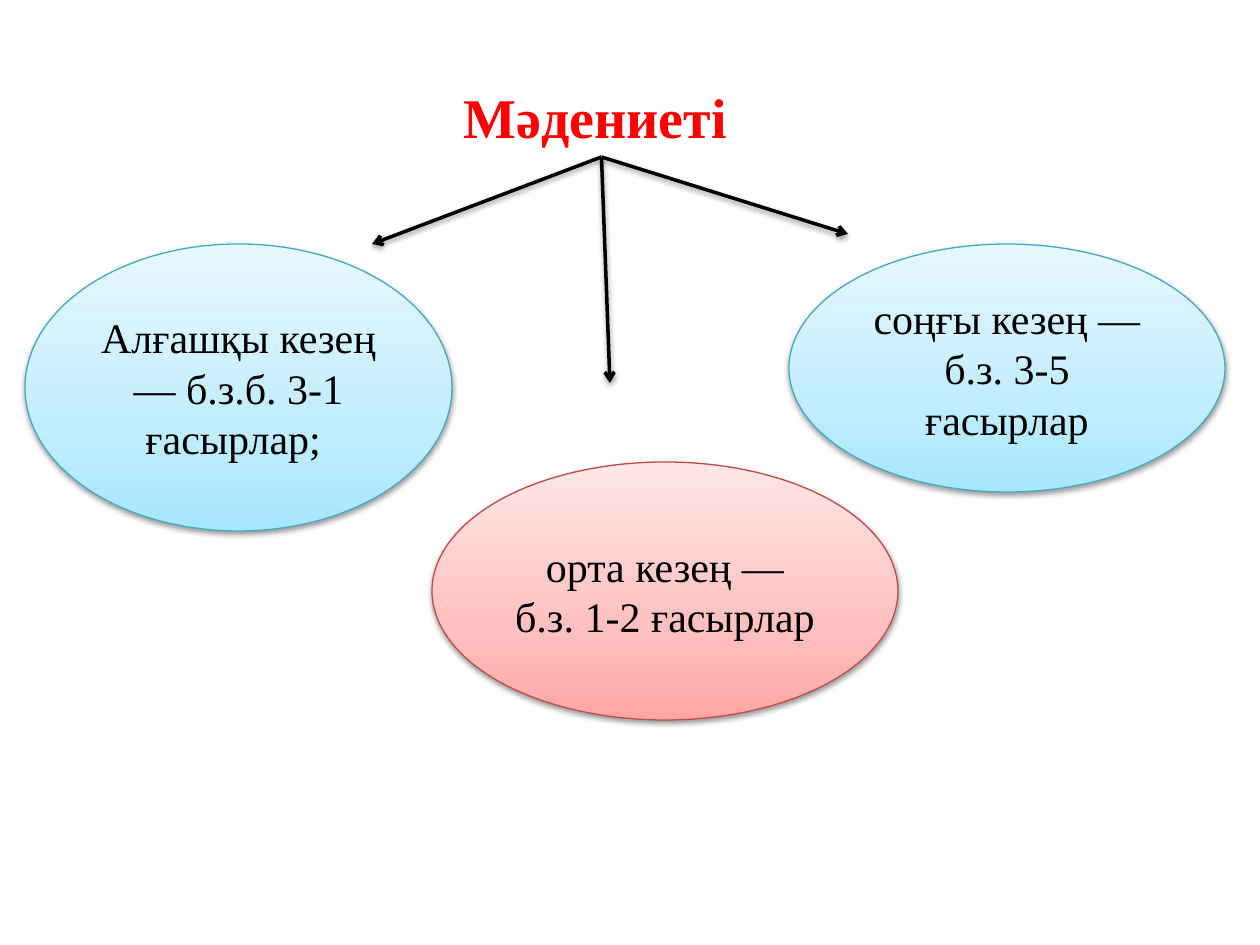
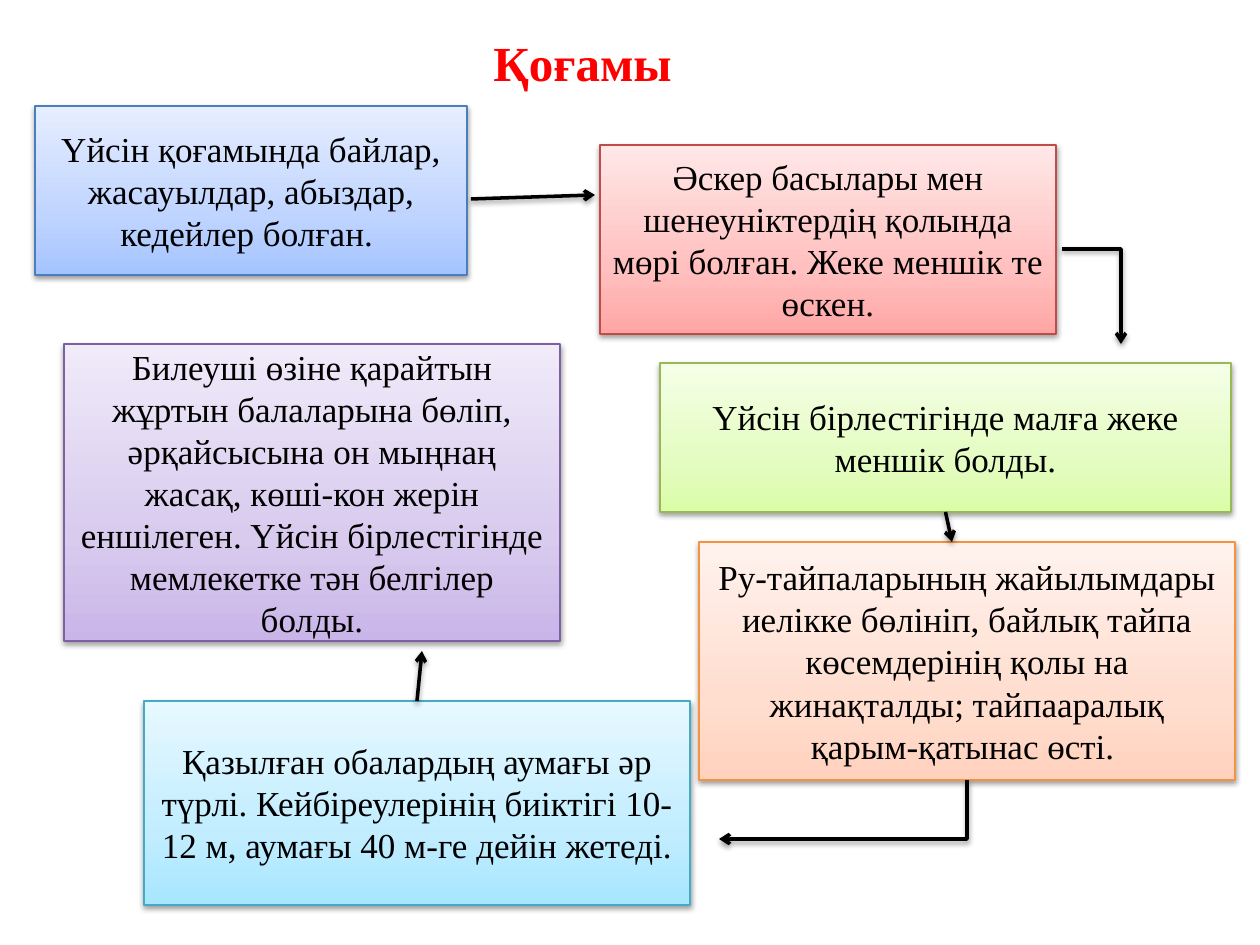
import copy
from dataclasses import dataclass
from typing import Any

import lxml.etree
import pptx
import pptx.dml.color
import pptx.enum.dml
import pptx.enum.shapes
import pptx.enum.text
import pptx.oxml.ns
import pptx.util

SHAPES = pptx.enum.shapes.MSO_SHAPE
CONNECTORS = pptx.enum.shapes.MSO_CONNECTOR
TOP, BOTTOM = 0, 2
FONT = "Times New Roman"
BLACK, TITLE_RED = "000000", "FF0000"

# Each palette: gradient from bottom to top, then outline
BLUE = ("A4C4FF", "BFD4FF", "E6EEFF", "4B7EBC")
RED = ("FFA6A5", "FFC0BF", "FFE7E7", "BF4C48")
GREEN = ("DAFDA7", "E4FCC2", "F5FFE7", "98B955")
ORANGE = ("FFD2BD", "FFDED0", "FFF2ED", "F69240")
TEAL = ("A7E6FF", "C1EDFF", "E7F8FF", "46AAC5")
PURPLE = ("C9B5E8", "D8CBEE", "F0EAF9", "7D60A0")
GRADIENT_POSITIONS = (0, 0.35, 1)

SHADOW = (
    '<a:effectLst xmlns:a="http://schemas.openxmlformats.org/drawingml/2006/main">'
    '<a:outerShdw blurRad="40000" dist="20000" dir="5400000" rotWithShape="0">'
    '<a:srgbClr val="000000"><a:alpha val="38000"/></a:srgbClr>'
    "</a:outerShdw></a:effectLst>"
)


def px(length):
    return pptx.util.Emu(round(length * 914400 / 126))


def color(hex_value):
    return pptx.dml.color.RGBColor.from_string(hex_value)


def add_shadow(properties):
    properties.append(pptx.oxml.parse_xml(SHADOW))


def write(paragraph, text, size, hex_value, bold=False):
    run = paragraph.add_run()
    run.text = text
    run.font.name = FONT
    run.font.size = pptx.util.Pt(size)
    run.font.bold = bold
    run.font.color.rgb = color(hex_value)


def fill_gradient(shape, hex_values):
    shape.fill.gradient()
    shape.fill.gradient_angle = 90
    stops = shape._element.spPr.find(".//" + pptx.oxml.ns.qn("a:gsLst"))
    stops.insert(1, copy.deepcopy(stops[0]))
    for stop, position, value in zip(
            shape.fill.gradient_stops, GRADIENT_POSITIONS, hex_values):
        stop.position = position
        stop.color.rgb = color(value)


@dataclass
class Region:
    """An area of a slide; all positions are relative to its corner."""
    slide: Any
    left: int = 0
    top: int = 0

    def point(self, x, y):
        return px(self.left + x), px(self.top + y)

    def title(self, box, text, size):
        x, y, width, height = box
        title = self.slide.shapes.add_textbox(
            *self.point(x, y), px(width), px(height))
        frame = title.text_frame
        frame.word_wrap = False
        frame.auto_size = pptx.enum.text.MSO_AUTO_SIZE.SHAPE_TO_FIT_TEXT
        write(frame.paragraphs[0], text, size, TITLE_RED, bold=True)
        return title

    def card(self, kind, box, palette, text, size):
        x, y, width, height = box
        card = self.slide.shapes.add_shape(
            kind, *self.point(x, y), px(width), px(height))
        *gradient, outline = palette
        fill_gradient(card, gradient)
        card.line.color.rgb = color(outline)
        card.line.width = pptx.util.Pt(0.75)
        add_shadow(card._element.spPr)
        frame = card.text_frame
        frame.word_wrap = True
        frame.vertical_anchor = pptx.enum.text.MSO_ANCHOR.MIDDLE
        frame.paragraphs[0].alignment = pptx.enum.text.PP_ALIGN.CENTER
        write(frame.paragraphs[0], text, size, BLACK)
        return card

    def arrow(self, start, end, source=None, side=BOTTOM,
              kind=CONNECTORS.STRAIGHT):
        arrow = self.slide.shapes.add_connector(
            kind, *self.point(*start), *self.point(*end))
        if source is not None:
            arrow.begin_connect(source, side)
        arrow.line.color.rgb = color(BLACK)
        arrow.line.width = pptx.util.Pt(2)
        lxml.etree.SubElement(
            arrow.line._get_or_add_ln(), pptx.oxml.ns.qn("a:tailEnd"), type="arrow")
        add_shadow(arrow._element.spPr)
        return arrow

    def elbow(self, start, end, source=None, down_first=False):
        """An arrow with one corner, optionally leaving downwards to the left."""
        elbow = self.arrow(start, end, source, kind=CONNECTORS.ELBOW)
        properties = elbow._element.spPr
        properties.find(pptx.oxml.ns.qn("a:prstGeom")).set("prst", "bentConnector2")
        if down_first:
            # A quarter turn about the centre swaps width and height
            run, drop = abs(end[0] - start[0]), abs(end[1] - start[1])
            elbow.left, elbow.top = self.point(
                (start[0] + end[0] - drop) / 2, (start[1] + end[1] - run) / 2)
            elbow.width, elbow.height = px(drop), px(run)
            frame = properties.find(pptx.oxml.ns.qn("a:xfrm"))
            frame.attrib.pop("flipH", None)
            frame.set("rot", "5400000")


def culture_periods(region):
    title = region.title((451, 76, 301, 81), "Мәдениеті", 32)

    # Periods
    for box, palette, period in (
        ((25, 244, 427, 287), TEAL, "Алғашқы кезең — б.з.б. 3-1 ғасырлар; "),
        ((432, 462, 466, 258), RED, "орта кезең — б.з. 1-2 ғасырлар"),
        ((789, 244, 436, 248), TEAL, "соңғы кезең — б.з. 3-5 ғасырлар"),
    ):
        region.card(SHAPES.OVAL, box, palette, period, 24)

    # Arrows fanning out from the title
    for tip in ((372, 244), (610, 383), (848, 234)):
        region.arrow((602, 156), tip, title)


def society_cycle(region):
    region.title((481, 26, 205, 72), "Қоғамы", 28)

    # Facts, in reading order along the arrows
    facts = (
        ((35, 106, 432, 169), BLUE,
         "Үйсін қоғамында байлар, жасауылдар, абыздар, кедейлер болған. "),
        ((600, 145, 456, 189), RED,
         "Әскер басылары мен шенеуніктердің қолында мөрі болған. "
         "Жеке меншік те өскен."),
        ((660, 363, 571, 149), GREEN,
         "Үйсін бірлестігінде малға жеке меншік болды."),
        ((699, 542, 536, 238), ORANGE,
         "Ру-тайпаларының жайылымдары иелікке бөлініп, байлық тайпа "
         "көсемдерінің қолы на жинақталды; тайпааралық қарым-қатынас өсті. "),
        ((144, 701, 546, 204), TEAL,
         "Қазылған обалардың аумағы әр түрлі. Кейбіреулерінің биіктігі "
         "10-12 м, аумағы 40 м-ге дейін жетеді."),
        ((64, 344, 496, 297), PURPLE,
         "Билеуші өзіне қарайтын жұртын балаларына бөліп, әрқайсысына он "
         "мыңнаң жасақ, көші-кон жерін еншілеген. Үйсін бірлестігінде "
         "мемлекетке тән белгілер болды."),
    )
    _, _, livestock, pastures, mounds, _ = [
        region.card(SHAPES.RECTANGLE, box, palette, fact, 20)
        for box, palette, fact in facts]

    # Arrows from fact to fact
    region.arrow((471, 199), (595, 195))
    region.elbow((1062, 249), (1121, 344))
    region.arrow((945, 512), (952, 542), livestock)
    region.elbow((967, 780), (719, 839), pastures, down_first=True)
    region.arrow((417, 701), (422, 651), mounds, TOP)


def main():
    deck = pptx.Presentation()
    deck.slide_width, deck.slide_height = px(1260), px(945)
    for build in (culture_periods, society_cycle):
        build(Region(deck.slides.add_slide(deck.slide_layouts[6])))
    deck.save("out.pptx")


if __name__ == "__main__":
    main()
